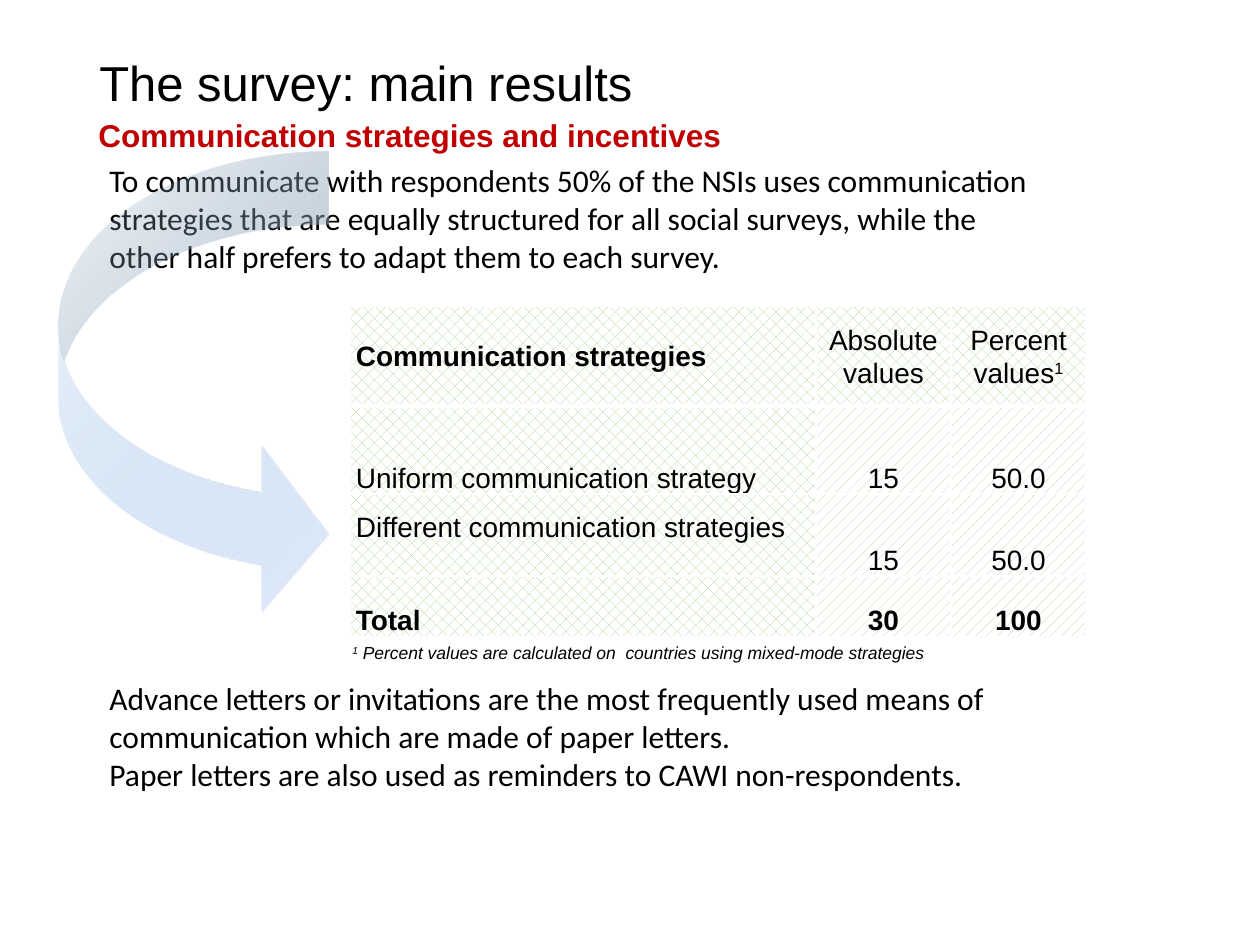
import pptx
import pptx.dml.color
import pptx.enum.dml
import pptx.enum.shapes
import pptx.enum.text
import pptx.oxml
import pptx.util
from dataclasses import dataclass

# Content
TITLE = "The survey: main results"
SUBTITLE = "Communication strategies and incentives"
INTRO = ["To communicate with respondents 50% of the NSIs uses communication "
         "strategies that are equally structured for all social surveys, while "
         "the other half prefers to adapt them to each survey."]
CLOSING = ["Advance letters or invitations are the most frequently used means of "
           "communication which are made of paper letters.",
           "Paper letters are also used as reminders to CAWI non-respondents."]
# "^" before a character raises it
FOOTNOTE = "^1 Percent values are calculated on  countries using mixed-mode strategies"
ROWS = [
    ("Communication strategies", "Absolute values", "Percent values^1"),
    ("Uniform communication strategy", "15", "50.0"),
    ("Different communication strategies", "15", "50.0"),
    ("Total", "30", "100"),
]
COL_WIDTHS = [466, 135, 135]
ROW_HEIGHTS = [100, 88, 82, 61]


@dataclass(frozen=True)
class Theme:
    head: str = "Arial"
    body: str = "Calibri"
    ink: str = "000000"
    accent: str = "C00000"
    green: str = "A9D18E"
    white: str = "FFFFFF"
    arrow_from: str = "9DC3E6"
    arrow_to: str = "E1EBFB"
    title_size: int = 28
    text_size: int = 18
    table_size: int = 16
    note_size: int = 10


T = Theme()
NS = 'xmlns:a="http://schemas.openxmlformats.org/drawingml/2006/main"'
ANCHOR = pptx.enum.text.MSO_ANCHOR
ALIGN = pptx.enum.text.PP_ALIGN
PATTERN = pptx.enum.dml.MSO_PATTERN


def px(n):
    return pptx.util.Emu(round(n * 914400 / 126))


def rgb(value):
    return pptx.dml.color.RGBColor.from_string(value)


def write(tf, paragraphs, size=T.text_size, font=T.body, color=T.ink, bold=False,
          italic=False, align=ALIGN.LEFT, spacing=None):
    tf.word_wrap = True
    for i, text in enumerate(paragraphs):
        p = tf.paragraphs[0] if i == 0 else tf.add_paragraph()
        p.alignment = align
        if spacing:
            p.line_spacing = spacing
        before, _, after = text.partition("^")
        for part, raised in ((before, False), (after[:1], True), (after[1:], False)):
            if not part:
                continue
            r = p.add_run()
            r.text = part
            r.font.size = pptx.util.Pt(size)
            r.font.name = font
            r.font.bold = bold
            r.font.italic = italic
            r.font.color.rgb = rgb(color)
            if raised:
                r._r.get_or_add_rPr().set("baseline", "30000")


def text_box(s, box, paragraphs, anchor=ANCHOR.TOP, top=6, **style):
    tf = s.shapes.add_textbox(*map(px, box)).text_frame
    tf.vertical_anchor = anchor
    tf.margin_top = px(top)
    write(tf, paragraphs, **style)


def set_borders(cell, header):
    tcPr = cell._tc.get_or_add_tcPr()
    for i, side in enumerate(("lnL", "lnR", "lnT", "lnB")):
        width = pptx.util.Pt(3 if header and side == "lnB" else 1)
        tcPr.insert(i, pptx.oxml.parse_xml(
            f'<a:{side} {NS} w="{width}"><a:solidFill><a:srgbClr val="{T.white}"/>'
            f'</a:solidFill></a:{side}>'))


def add_results(s):
    table = s.shapes.add_table(len(ROWS), len(COL_WIDTHS), px(350), px(306),
                               px(sum(COL_WIDTHS)), px(sum(ROW_HEIGHTS))).table
    table.first_row = table.horz_banding = False
    for column, width in zip(table.columns, COL_WIDTHS):
        column.width = px(width)
    for i, (row, height) in enumerate(zip(ROWS, ROW_HEIGHTS)):
        table.rows[i].height = px(height)
        header, total = i == 0, i == len(ROWS) - 1
        for j, text in enumerate(row):
            cell = table.cell(i, j)
            label = j == 0
            cell.margin_left = cell.margin_right = px(6)
            # The label of the third row sits one line above its values
            cell.margin_top, cell.margin_bottom = 0, px(33 if label and i == 2 else 0)
            cell.vertical_anchor = ANCHOR.MIDDLE if header else ANCHOR.BOTTOM
            write(cell.text_frame, [text], size=T.table_size, font=T.head,
                  bold=total or (header and label), spacing=1.07,
                  align=ALIGN.LEFT if label else ALIGN.CENTER)
            cell.fill.patterned()
            cell.fill.pattern = (PATTERN.PERCENT_30 if header or label
                                 else PATTERN.PERCENT_20)
            cell.fill.fore_color.rgb = rgb(T.green)
            cell.fill.back_color.rgb = rgb(T.white)
            set_borders(cell, header)


def add_arrow(s):
    sp = s.shapes.add_shape(pptx.enum.shapes.MSO_SHAPE.CURVED_RIGHT_ARROW,
                            px(59), px(152), px(270), px(466))
    sp.shadow.inherit = False
    for i, value in enumerate((0.27, 0.62, 0.25)):
        sp.adjustments[i] = value
    sp.line.fill.background()
    # Gradient that starts almost transparent
    sp._element.spPr.insert(2, pptx.oxml.parse_xml(
        f'<a:gradFill {NS} rotWithShape="1"><a:gsLst>'
        f'<a:gs pos="6000"><a:srgbClr val="{T.arrow_from}"><a:alpha val="15000"/>'
        f'</a:srgbClr></a:gs><a:gs pos="100000"><a:srgbClr val="{T.arrow_to}"/></a:gs>'
        f'</a:gsLst><a:lin ang="2700000" scaled="0"/></a:gradFill>'))


def main():
    prs = pptx.Presentation()
    prs.slide_width, prs.slide_height = px(1260), px(945)
    s = prs.slides.add_slide(prs.slide_layouts[6])

    # Headings and introduction
    text_box(s, (87, 50, 1008, 120), [TITLE], top=9, size=T.title_size,
             font=T.head, spacing=0.9)
    text_box(s, (86, 106, 1013, 73), [SUBTITLE], font=T.head, color=T.accent,
             bold=True, spacing=1.1)
    text_box(s, (97, 155, 951, 127), INTRO)

    # Results table, closing text and footnote
    add_results(s)
    text_box(s, (97, 673, 1028, 127), CLOSING)
    text_box(s, (340, 636, 605, 34), [FOOTNOTE], anchor=ANCHOR.MIDDLE,
             size=T.note_size, font=T.head, italic=True, align=ALIGN.JUSTIFY)

    # Arrow over the text
    add_arrow(s)
    prs.save("out.pptx")


if __name__ == "__main__":
    main()
